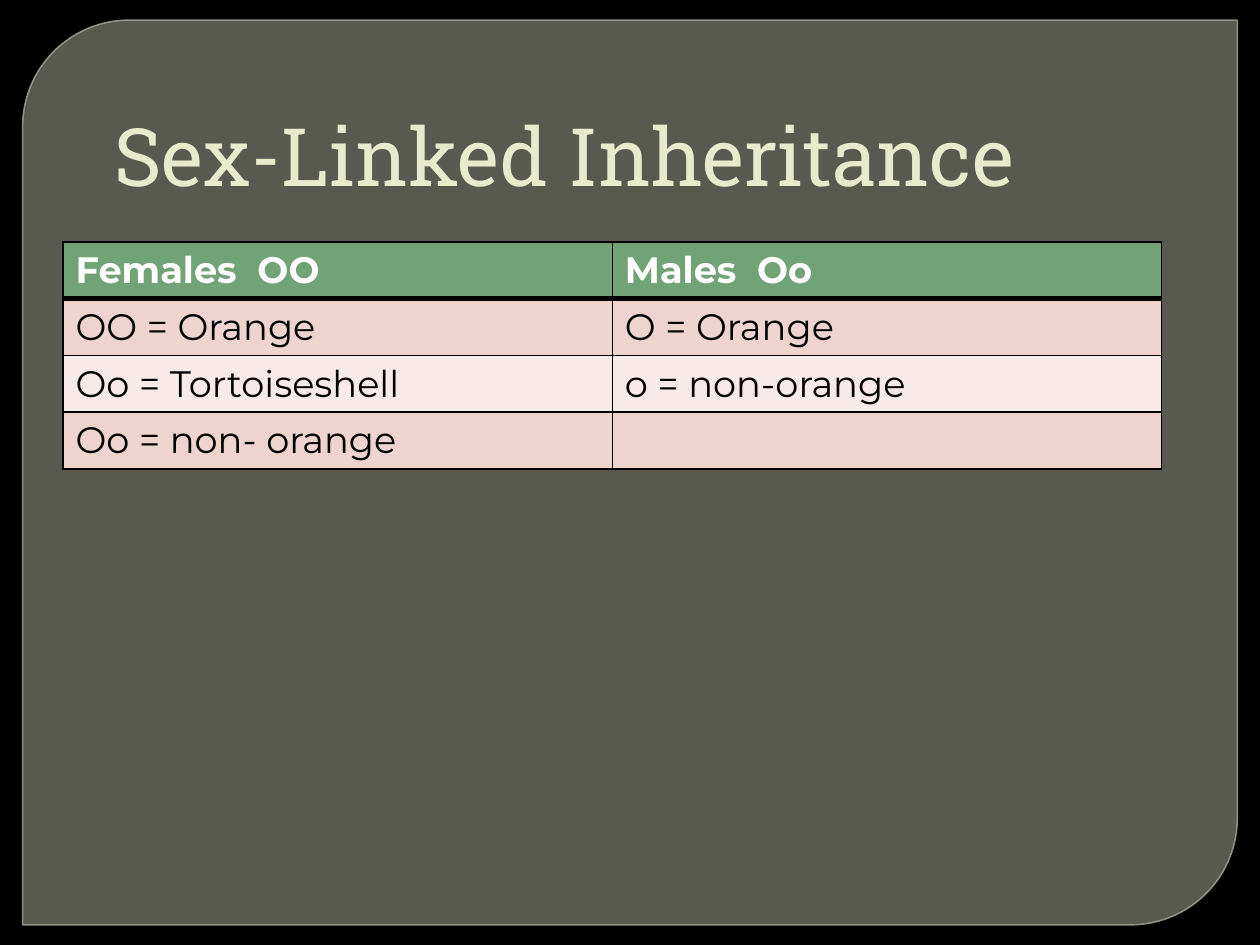
import lxml.etree
import pptx
import pptx.dml.color
import pptx.enum.shapes
import pptx.enum.text
import pptx.oxml.ns
import pptx.util

Inches = pptx.util.Inches
Pt = pptx.util.Pt
RGBColor = pptx.dml.color.RGBColor
qn = pptx.oxml.ns.qn

BLACK = RGBColor(0x00, 0x00, 0x00)
WHITE = RGBColor(0xFF, 0xFF, 0xFF)
PANEL_FILL = RGBColor(0x88, 0x8B, 0x7B)
PANEL_LINE = RGBColor(0x9D, 0xA0, 0x90)
CREAM = RGBColor(0xE7, 0xEA, 0xCB)
GREEN = RGBColor(0x72, 0xA3, 0x76)
ROSE = RGBColor(0xEE, 0xD3, 0xCF)
PALE_ROSE = RGBColor(0xF7, 0xEA, 0xE9)

TITLE_FONT = "Roboto Slab"
BODY_FONT = "Montserrat"
GENOTYPES = [
    ("Females  OO", "Males  Oo"),
    ("OO = Orange", "O = Orange"),
    ("Oo = Tortoiseshell", "o = non-orange"),
    ("Oo = non- orange", ""),
]


def add_run(paragraph, text, font_name, size, color, bold=False):
    run = paragraph.add_run()
    run.text = text
    run.font.name = font_name
    run.font.size = Pt(size)
    run.font.bold = bold
    run.font.color.rgb = color


def set_opacity(properties, percent):
    color = properties.find(qn("a:solidFill")).find(qn("a:srgbClr"))
    lxml.etree.SubElement(color, qn("a:alpha"), val=str(percent * 1000))


def set_borders(cell, widths):
    properties = cell._tc.get_or_add_tcPr()
    for position, (side, width) in enumerate(widths.items()):
        line = lxml.etree.Element(qn(f"a:ln{side}"), w=str(Pt(width)))
        fill = lxml.etree.SubElement(line, qn("a:solidFill"))
        lxml.etree.SubElement(fill, qn("a:srgbClr"), val=str(BLACK))
        properties.insert(position, line)


def add_panel(slide, left, top, width, height):
    panel = slide.shapes.add_shape(
        pptx.enum.shapes.MSO_SHAPE.ROUND_2_DIAG_RECTANGLE,
        left, top, width, height)
    panel.shadow.inherit = False
    panel.adjustments[0] = 0.118
    panel.adjustments[1] = 0
    panel.fill.solid()
    panel.fill.fore_color.rgb = PANEL_FILL
    panel.line.color.rgb = PANEL_LINE
    panel.line.width = Pt(0.87)
    properties = panel._element.spPr
    set_opacity(properties, 65)
    set_opacity(properties.find(qn("a:ln")), 88)


def add_title(slide, left, top, width, height):
    title = slide.shapes.add_textbox(left, top, width, height)
    frame = title.text_frame
    frame.word_wrap = True
    frame.vertical_anchor = pptx.enum.text.MSO_ANCHOR.BOTTOM
    paragraph = frame.paragraphs[0]
    paragraph._p.get_or_add_pPr().set("marL", str(Inches(0.06)))
    add_run(paragraph, "Sex-Linked Inheritance", TITLE_FONT, 46, CREAM)


def add_genotype_table(slide, left, top, width, height):
    table = slide.shapes.add_table(
        len(GENOTYPES), len(GENOTYPES[0]), left, top, width, height).table
    for row_index, texts in enumerate(GENOTYPES):
        is_header = row_index == 0
        fill_color = GREEN if is_header else (PALE_ROSE, ROSE)[row_index % 2]
        widths = {"L": 1, "R": 1, "T": 3 if row_index == 1 else 1,
                  "B": 3 if is_header else 1}
        for column_index, text in enumerate(texts):
            cell = table.cell(row_index, column_index)
            cell.fill.solid()
            cell.fill.fore_color.rgb = fill_color
            set_borders(cell, widths)
            if text:
                add_run(cell.text_frame.paragraphs[0], text, BODY_FONT, 21,
                        WHITE if is_header else BLACK, is_header)


def main():
    presentation = pptx.Presentation()
    presentation.slide_width = Inches(10)
    presentation.slide_height = Inches(7.5)
    slide = presentation.slides.add_slide(presentation.slide_layouts[6])
    slide.background.fill.solid()
    slide.background.fill.fore_color.rgb = BLACK
    add_panel(slide, Inches(0.18), Inches(0.16), Inches(9.64), Inches(7.18))
    add_title(slide, Inches(0.75), Inches(0.33), Inches(8.75), Inches(1.33))
    add_genotype_table(
        slide, Inches(0.5), Inches(1.92), Inches(8.72), Inches(1.8))
    presentation.save("out.pptx")


if __name__ == "__main__":
    main()
